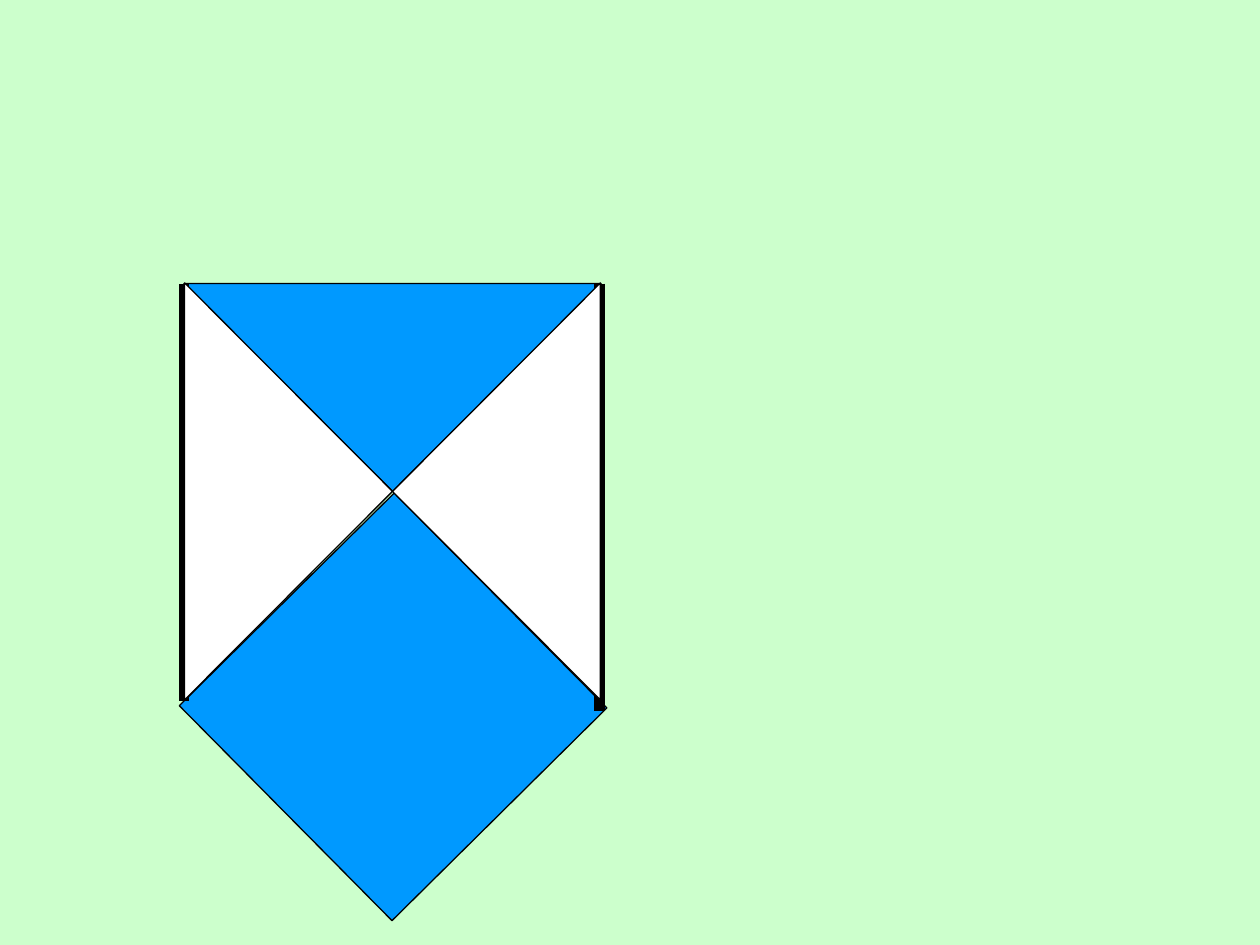
"""Build a slide with a blue and white shield on a pale green ground."""
from lxml.etree import SubElement
from pptx import Presentation
from pptx.dml.color import RGBColor
from pptx.enum.shapes import MSO_CONNECTOR, MSO_SHAPE
from pptx.oxml.ns import qn
from pptx.util import Inches, Pt

COLORS = {"ground": "CCFFCC", "blue": "0099FF", "white": "FFFFFF", "black": "000000"}


def tint(name):
    return RGBColor.from_string(COLORS[name])


def add_form(slide, kind, box, turn, color):
    form = slide.shapes.add_shape(kind, *map(Inches, box))
    form.rotation = turn
    form.shadow.inherit = False
    form.fill.solid()
    form.fill.fore_color.rgb = tint(color)
    form.line.color.rgb = tint("black")
    form.line.width = Pt(0.75)


deck = Presentation()
deck.slide_width, deck.slide_height = Inches(10), Inches(7.5)
slide = deck.slides.add_slide(deck.slide_layouts[6])
slide.background.fill.solid()
slide.background.fill.fore_color.rgb = tint("ground")

base, height = 3.31, 1.65
left, right, top = 1.46, 4.76, 2.25
side = top + height / 2

add_form(slide, MSO_SHAPE.RECTANGLE, (1.92, 4.41, 2.4, 2.4), 45.3, "blue")
add_form(slide, MSO_SHAPE.ISOSCELES_TRIANGLE, (left, top, base, height), 180, "blue")

for x, end in ((left, 5.56), (right, 5.64)):
    edge = slide.shapes.add_connector(
        MSO_CONNECTOR.STRAIGHT, Inches(x), Inches(top), Inches(x), Inches(end))
    edge.line.color.rgb = tint("black")
    edge.line.width = Pt(6)
    SubElement(edge._element.spPr, qn("a:effectLst"))

for x, turn in ((left + height / 2, 270), (left - height / 2, 90)):
    add_form(slide, MSO_SHAPE.ISOSCELES_TRIANGLE, (x, side, base, height), turn, "white")

deck.save("out.pptx")
